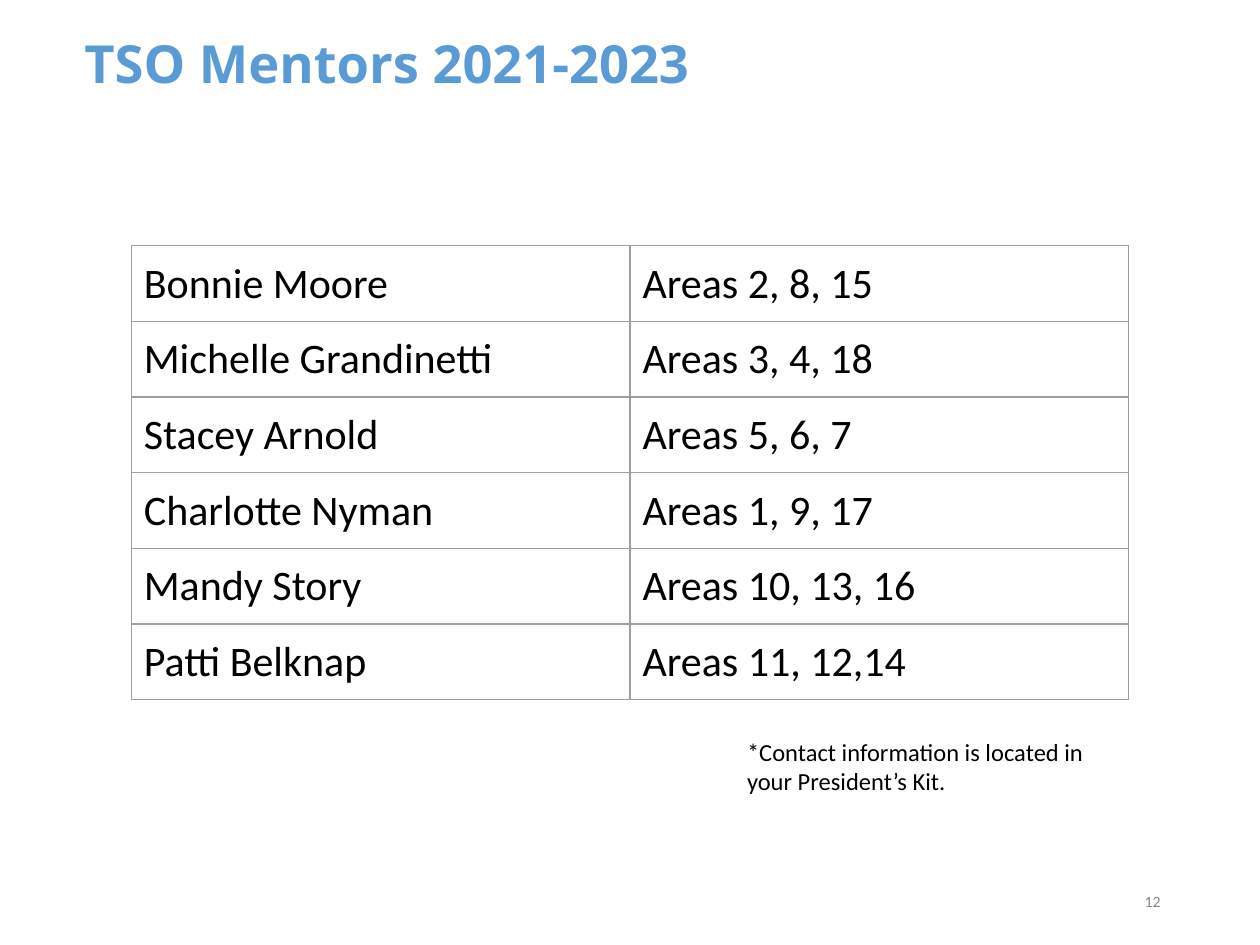
"""Build the TSO mentors slide with its table of areas."""
from lxml.etree import SubElement
from pptx import Presentation
from pptx.dml.color import RGBColor
from pptx.enum.text import MSO_ANCHOR as Anchor, PP_ALIGN as Align
from pptx.oxml.ns import qn
from pptx.util import Pt


def color(hex_string):
    return RGBColor.from_string(hex_string)


def write(frame, text, size, font="Calibri", ink="000000", bold=False,
          align=Align.LEFT, anchor=Anchor.TOP, inset=7.2):
    frame.word_wrap = True
    frame.vertical_anchor = anchor
    frame.margin_left = frame.margin_right = Pt(7.2)
    frame.margin_top = frame.margin_bottom = Pt(inset)
    paragraph = frame.paragraphs[0]
    paragraph.alignment = align
    run = paragraph.add_run()
    run.text = text
    run.font.name = font
    run.font.size = Pt(size)
    run.font.bold = bold
    run.font.color.rgb = color(ink)


deck = Presentation()
deck.slide_width, deck.slide_height = Pt(720), Pt(540)
slide = deck.slides.add_slide(deck.slide_layouts[5])

title = slide.shapes.title
title.left, title.top, title.width, title.height = Pt(41), Pt(14.4), Pt(467.3), Pt(44)
write(title.text_frame, "TSO Mentors 2021-2023", 30, font="Open Sans",
      ink="5B9BD5", bold=True, inset=3.6)

page_number = slide.shapes.add_textbox(Pt(508.3), Pt(500.4), Pt(162), Pt(28.8))
write(page_number.text_frame, "12", 9, ink="888888", align=Align.RIGHT,
      anchor=Anchor.MIDDLE, inset=3.6)

contact_note = slide.shapes.add_textbox(Pt(419.8), Pt(414), Pt(225.4), Pt(48.2))
write(contact_note.text_frame,
      "*Contact information is located in your President’s Kit.", 14)

mentors = [
    ("Bonnie Moore", "Areas 2, 8, 15"),
    ("Michelle Grandinetti", "Areas 3, 4, 18"),
    ("Stacey Arnold", "Areas 5, 6, 7"),
    ("Charlotte Nyman", "Areas 1, 9, 17"),
    ("Mandy Story", "Areas 10, 13, 16"),
    ("Patti Belknap", "Areas 11, 12,14"),
]
row_height, column_width = 43, 285
mentor_table = slide.shapes.add_table(
    len(mentors), 2, Pt(75), Pt(140.4),
    Pt(2 * column_width), Pt(len(mentors) * row_height)).table
mentor_table.first_row = mentor_table.horz_banding = False

for row, mentor in enumerate(mentors):
    for column, entry in enumerate(mentor):
        cell = mentor_table.cell(row, column)
        write(cell.text_frame, entry, 24)
        cell.margin_left = cell.margin_right = Pt(7.2)
        cell.margin_top = cell.margin_bottom = Pt(7.2)
        cell_format = cell._tc.get_or_add_tcPr()
        for edge in ("a:lnL", "a:lnR", "a:lnT", "a:lnB"):
            border = SubElement(cell_format, qn(edge), w=str(Pt(0.75)))
            SubElement(SubElement(border, qn("a:solidFill")), qn("a:srgbClr"), val="9E9E9E")
        cell.fill.background()

deck.save("out.pptx")
